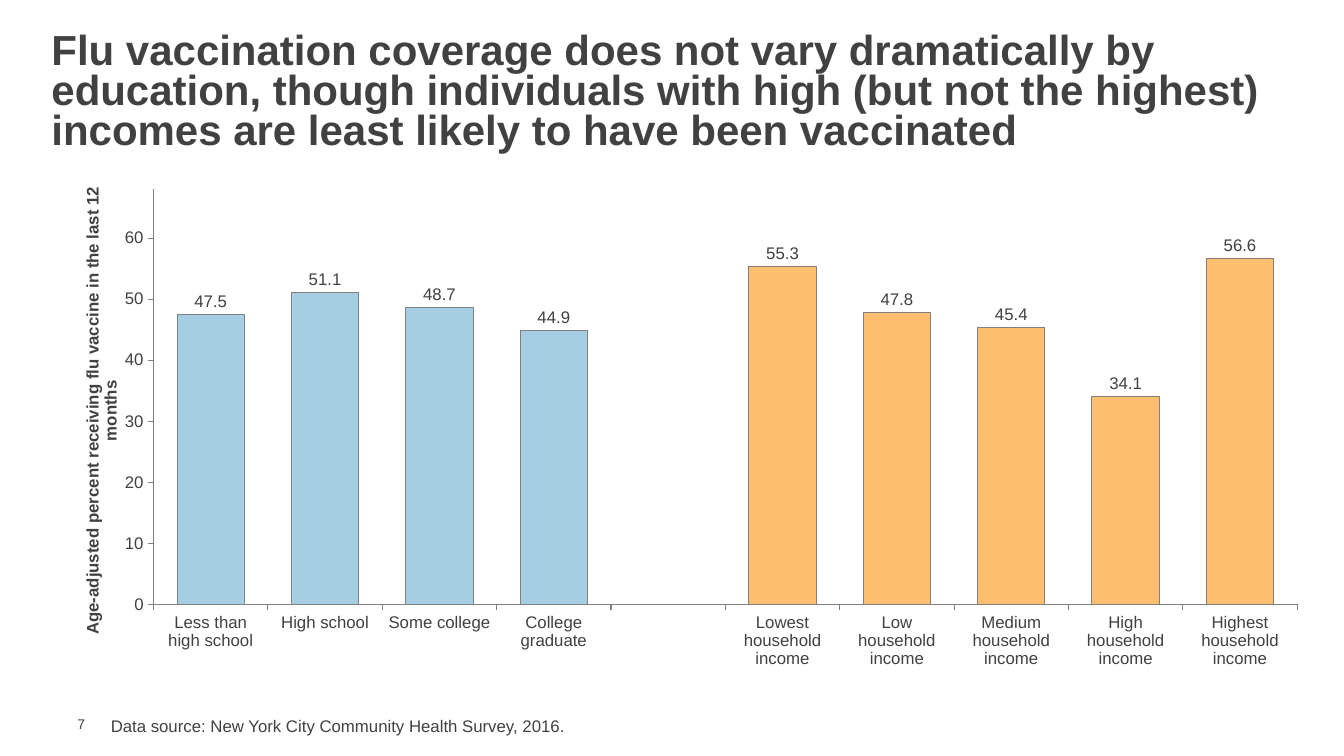
"""Build a slide with a column chart of flu vaccination by education and income."""
import pptx
import pptx.chart.data
import pptx.dml.color
import pptx.enum.chart
import pptx.enum.text
import pptx.oxml
import pptx.oxml.ns
import pptx.util

PX = 9144
TEXT_GREY = pptx.dml.color.RGBColor(0x41, 0x40, 0x42)
LINE_GREY = pptx.dml.color.RGBColor(0x80, 0x80, 0x80)
EDUCATION_BLUE = pptx.dml.color.RGBColor(0xA6, 0xCE, 0xE3)
INCOME_ORANGE = pptx.dml.color.RGBColor(0xFD, 0xBF, 0x6F)

TITLE = ("Flu vaccination coverage does not vary dramatically by education, though "
         "individuals with high (but not the highest) incomes are least likely to "
         "have been vaccinated")
AXIS_TITLE = "Age-adjusted percent receiving flu vaccine in the last 12 months"
EDUCATION = {"Less than high school": 47.5, "High school": 51.1,
             "Some college": 48.7, "College graduate": 44.9}
INCOME = {"Lowest household income": 55.3, "Low household income": 47.8,
          "Medium household income": 45.4, "High household income": 34.1,
          "Highest household income": 56.6}


def set_attributes(target, values):
    """Set each named attribute of the target."""
    for name, value in values.items():
        setattr(target, name, value)


def format_font(font, points, bold=False):
    """Give a font the slide's typeface and colour."""
    set_attributes(font, {"name": "Arial", "size": pptx.util.Pt(points), "bold": bold})
    font.color.rgb = TEXT_GREY


def format_line(line):
    """Draw a thin grey line."""
    line.color.rgb = LINE_GREY
    line.width = pptx.util.Pt(0.75)


def place(shape, left, top, width, height):
    """Position a shape in px."""
    set_attributes(shape, {"left": left * PX, "top": top * PX,
                           "width": width * PX, "height": height * PX})


def fill_title(slide):
    """Write the headline in the title placeholder."""
    title = slide.shapes.title
    place(title, 41, 27, 1250, 131)
    frame = title.text_frame
    set_attributes(frame, {"text": TITLE, "word_wrap": True,
                           "vertical_anchor": pptx.enum.text.MSO_ANCHOR.MIDDLE,
                           "auto_size": pptx.enum.text.MSO_AUTO_SIZE.NONE})
    paragraph = frame.paragraphs[0]
    set_attributes(paragraph, {"alignment": pptx.enum.text.PP_ALIGN.LEFT, "line_spacing": 0.8})
    format_font(paragraph.runs[0].font, 30, bold=True)


def add_text(slide, text, box, points, frame_values):
    """Add a one-line text box."""
    shape = slide.shapes.add_textbox(*(length * PX for length in box))
    set_attributes(shape.text_frame, {"text": text, "word_wrap": True, **frame_values})
    format_font(shape.text_frame.paragraphs[0].runs[0].font, points)


def set_layout(element, index, values):
    """Fix the place of a chart part as fractions of the chart."""
    for layout in element.findall(pptx.oxml.ns.qn("c:layout")):
        element.remove(layout)
    settings = "".join(f'<c:{name} val="{value}"/>' for name, value in values.items())
    element.insert(index, pptx.oxml.parse_xml(
        f'<c:layout {pptx.oxml.ns.nsdecls("c")}><c:manualLayout>{settings}'
        '</c:manualLayout></c:layout>'))


def format_axes(chart):
    """Style both axes and title the value axis."""
    for axis in (chart.category_axis, chart.value_axis):
        set_attributes(axis, {"has_major_gridlines": False,
                              "major_tick_mark": pptx.enum.chart.XL_TICK_MARK.OUTSIDE})
        format_line(axis.format.line)
        format_font(axis.tick_labels.font, 12)
    value_axis = chart.value_axis
    set_attributes(value_axis, {"minimum_scale": 0, "maximum_scale": 68, "major_unit": 10})
    set_attributes(value_axis.tick_labels, {"number_format": "0",
                                            "number_format_is_linked": False})
    axis_title = value_axis.axis_title
    frame = axis_title.text_frame
    frame.text = AXIS_TITLE
    format_font(frame.paragraphs[0].runs[0].font, 12, bold=True)
    body = axis_title._element.find(".//" + pptx.oxml.ns.qn("a:bodyPr"))
    body.set("rot", "-5400000")
    body.set("vert", "horz")
    set_layout(axis_title._element, 1,
               {"xMode": "edge", "yMode": "edge", "x": 0.01, "y": 0.02})


def format_columns(plot):
    """Colour the two groups of columns and label their values."""
    set_attributes(plot, {"gap_width": 70, "vary_by_categories": False})
    series = plot.series[0]
    income_start = len(EDUCATION) + 1
    income_points = [series.points[income_start + step] for step in range(len(INCOME))]
    for column in [series, *income_points]:
        column.format.fill.solid()
        column.format.fill.fore_color.rgb = EDUCATION_BLUE if column is series else INCOME_ORANGE
        format_line(column.format.line)
    labels = series.data_labels
    set_attributes(labels, {"show_value": True, "number_format": "#,##0.0",
                            "number_format_is_linked": False,
                            "position": pptx.enum.chart.XL_LABEL_POSITION.OUTSIDE_END})
    format_font(labels.font, 12)


def add_coverage_chart(slide):
    """Add the column chart with a gap between the groups."""
    data = pptx.chart.data.CategoryChartData()
    data.categories = [*EDUCATION, "", *INCOME]
    data.add_series("Series 1", [*EDUCATION.values(), None, *INCOME.values()])
    box = (length * PX for length in (66, 171, 1233, 564))
    chart = slide.shapes.add_chart(
        pptx.enum.chart.XL_CHART_TYPE.COLUMN_CLUSTERED, *box, data).chart
    set_attributes(chart, {"has_legend": False, "has_title": False})
    format_font(chart.font, 12)
    format_axes(chart)
    format_columns(chart.plots[0])
    plot_area = chart._chartSpace.find(".//" + pptx.oxml.ns.qn("c:plotArea"))
    set_layout(plot_area, 0, {"layoutTarget": "inner", "xMode": "edge", "yMode": "edge",
                              "x": 0.07, "y": 0.03, "w": 0.92, "h": 0.73})


def main():
    """Build and save the presentation."""
    presentation = pptx.Presentation()
    set_attributes(presentation, {"slide_width": 1333 * PX, "slide_height": 750 * PX})
    slide = presentation.slides.add_slide(presentation.slide_layouts[5])
    fill_title(slide)
    add_coverage_chart(slide)
    add_text(slide, "7", (67, 710, 43, 17), 10,
             {"margin_top": 0, "margin_right": 0, "margin_bottom": 0,
              "vertical_anchor": pptx.enum.text.MSO_ANCHOR.MIDDLE})
    add_text(slide, "Data source: New York City Community Health Survey, 2016.",
             (100, 705, 992, 30), 12, {})
    presentation.save("out.pptx")


if __name__ == "__main__":
    main()
